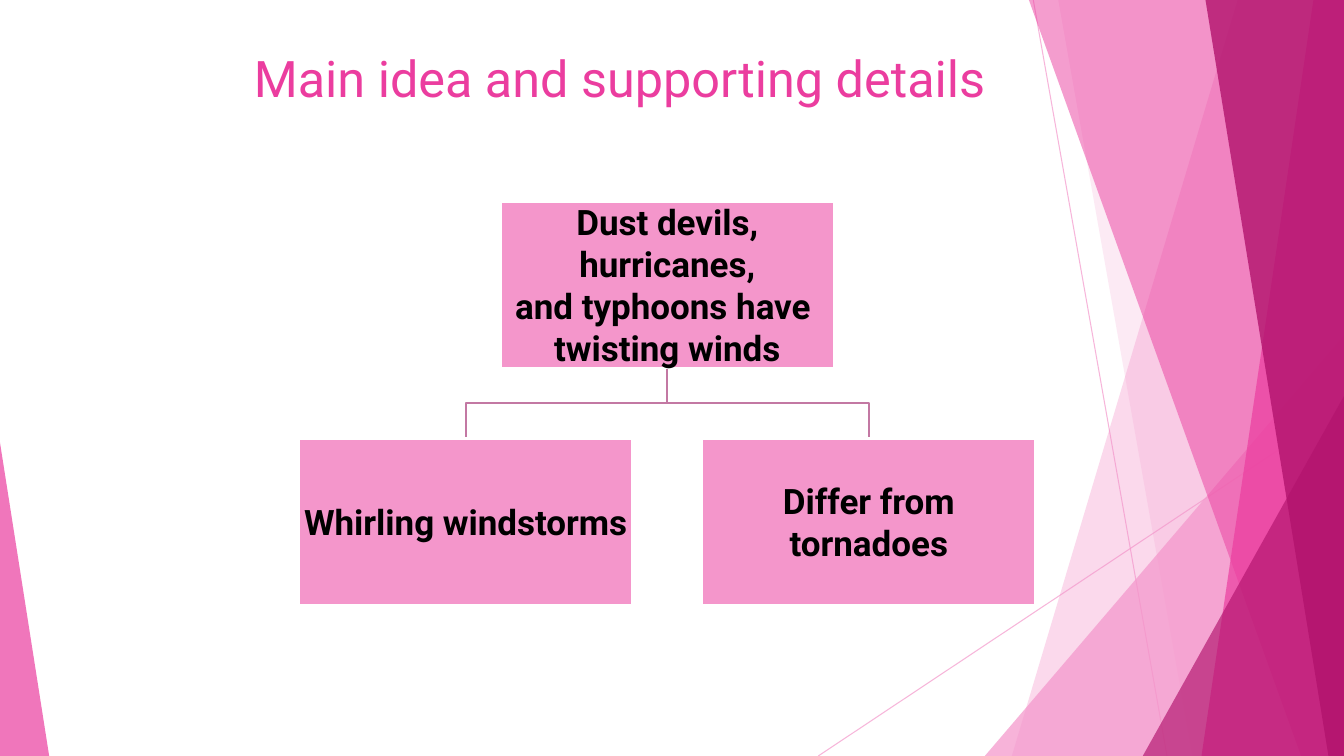
from pptx import Presentation
from pptx.dml.color import RGBColor
from pptx.enum.shapes import MSO_CONNECTOR, MSO_SHAPE
from pptx.enum.text import MSO_ANCHOR, PP_ALIGN
from pptx.oxml.ns import qn
from pptx.oxml.xmlchemy import OxmlElement
from pptx.util import Cm, Pt

RECTANGLE = MSO_SHAPE.RECTANGLE
TRIANGLE = MSO_SHAPE.ISOSCELES_TRIANGLE
STRAIGHT = MSO_CONNECTOR.STRAIGHT
MIDDLE, TOP = MSO_ANCHOR.MIDDLE, MSO_ANCHOR.TOP
CENTER, LEFT = PP_ALIGN.CENTER, PP_ALIGN.LEFT

COLORS = {
    "light": "F496CB",
    "pink": "EB3D9F",
    "deep": "B2136D",
    "branch": "C378A3",
    "white": "FFFFFF",
    "black": "000000",
}
WIDTH, HEIGHT = 33.87, 19.05
BOX_WIDTH, BOX_HEIGHT = 8.39, 4.19
ROOT_LEFT, ROOT_TOP = 12.62, 5.08
CHILD_TOP, CHILD_OFFSET = 11.05, 5.08

TITLE_FONT = {"name": "Roboto", "size": Pt(36), "bold": False}
BOX_FONT = {"name": "Roboto", "size": Pt(25), "bold": True}


def color(name):
    return RGBColor.from_string(COLORS[name])


def set_opacity(shape, percent):
    for color_element in shape._element.spPr.iter(qn("a:srgbClr")):
        alpha = OxmlElement("a:alpha")
        alpha.set("val", str(percent * 1000))
        color_element.append(alpha)


def fill_facet(shape, color_name, opacity):
    shape.shadow.inherit = False
    shape.fill.solid()
    shape.fill.fore_color.rgb = color(color_name)
    shape.line.fill.background()
    set_opacity(shape, opacity)


def add_polyline(slide, points, close):
    points = [(Cm(x), Cm(y)) for x, y in points]
    builder = slide.shapes.build_freeform(*points[0], scale=1.0)
    builder.add_line_segments(points[1:], close=close)
    return builder.convert_to_shape()


def add_band(slide, top_x, bottom_x, color_name, opacity):
    """Fill the area between a slanted edge and the right side of the slide."""
    corners = [(top_x, 0), (WIDTH, 0), (WIDTH, HEIGHT), (bottom_x, HEIGHT)]
    fill_facet(add_polyline(slide, corners, True), color_name, opacity)


def add_corner(slide, left, right, top, apex, color_name, opacity):
    """Add a triangle standing on the bottom edge of the slide."""
    triangle = slide.shapes.add_shape(
        TRIANGLE, Cm(left), Cm(top), Cm(right - left), Cm(HEIGHT - top))
    triangle.adjustments[0] = apex
    fill_facet(triangle, color_name, opacity)


def add_hairline(slide, *ends):
    line = slide.shapes.add_connector(STRAIGHT, *map(Cm, ends))
    line.line.color.rgb = color("light")
    line.line.width = Pt(0.75)
    set_opacity(line, 70)
    line._element.spPr.append(OxmlElement("a:effectLst"))


def add_background(slide):
    add_hairline(slide, 26.04, 0, 29.41, HEIGHT)
    add_hairline(slide, WIDTH, 10.24, 20.62, HEIGHT)
    add_band(slide, 31.19, 25.5, "light", 36)
    add_band(slide, 26.67, 30.05, "light", 20)
    add_corner(slide, 24.82, WIDTH, 8.46, 1, "light", 72)
    add_band(slide, 25.93, 32.79, "pink", 50)
    add_band(slide, 33.1, 30.28, "pink", 70)
    add_band(slide, 30.38, 33.48, "deep", 80)
    add_corner(slide, 28.8, WIDTH, 9.98, 1, "deep", 66)
    add_corner(slide, 0, 1.24, 11.15, 0, "pink", 70)


def write_text(frame, lines, font, color_name, alignment, anchor):
    frame.word_wrap = True
    frame.vertical_anchor = anchor
    for index, line in enumerate(lines):
        paragraph = frame.add_paragraph() if index else frame.paragraphs[0]
        paragraph.alignment = alignment
        run = paragraph.add_run()
        run.text = line
        run.font.color.rgb = color(color_name)
        for name, value in font.items():
            setattr(run.font, name, value)


def add_title(slide, text):
    title = slide.shapes.add_textbox(Cm(6.15), Cm(1.07), Cm(19.08), Cm(3.38))
    write_text(title.text_frame, [text], TITLE_FONT, "pink", LEFT, TOP)


def add_box(slide, left, top, lines):
    box = slide.shapes.add_shape(
        RECTANGLE, Cm(left), Cm(top), Cm(BOX_WIDTH), Cm(BOX_HEIGHT))
    box.shadow.inherit = False
    box.fill.solid()
    box.fill.fore_color.rgb = color("light")
    box.line.color.rgb = color("white")
    box.line.width = Pt(1.5)
    for side in ("left", "top", "right", "bottom"):
        setattr(box.text_frame, f"margin_{side}", Cm(0.05))
    write_text(box.text_frame, lines, BOX_FONT, "black", CENTER, MIDDLE)


def add_branch(slide, offset):
    """Join the root box to the child box that lies offset to its side."""
    center = ROOT_LEFT + BOX_WIDTH / 2
    root_bottom = ROOT_TOP + BOX_HEIGHT
    bend = (root_bottom + CHILD_TOP) / 2
    branch = add_polyline(slide, [
        (center, root_bottom), (center, bend),
        (center + offset, bend), (center + offset, CHILD_TOP)], False)
    branch.shadow.inherit = False
    branch.fill.background()
    branch.line.color.rgb = color("branch")
    branch.line.width = Pt(1.5)


def main():
    presentation = Presentation()
    presentation.slide_width = Cm(WIDTH)
    presentation.slide_height = Cm(HEIGHT)
    slide = presentation.slides.add_slide(presentation.slide_layouts[6])

    add_background(slide)
    add_title(slide, "Main idea and supporting details")

    details = {
        -CHILD_OFFSET: "Whirling windstorms",
        CHILD_OFFSET: "Differ from tornadoes",
    }
    for offset in details:
        add_branch(slide, offset)
    add_box(slide, ROOT_LEFT, ROOT_TOP, [
        "Dust devils, hurricanes,", "and typhoons have ", "twisting winds"])
    for offset, text in details.items():
        add_box(slide, ROOT_LEFT + offset, CHILD_TOP, [text])

    presentation.save("out.pptx")


if __name__ == "__main__":
    main()
